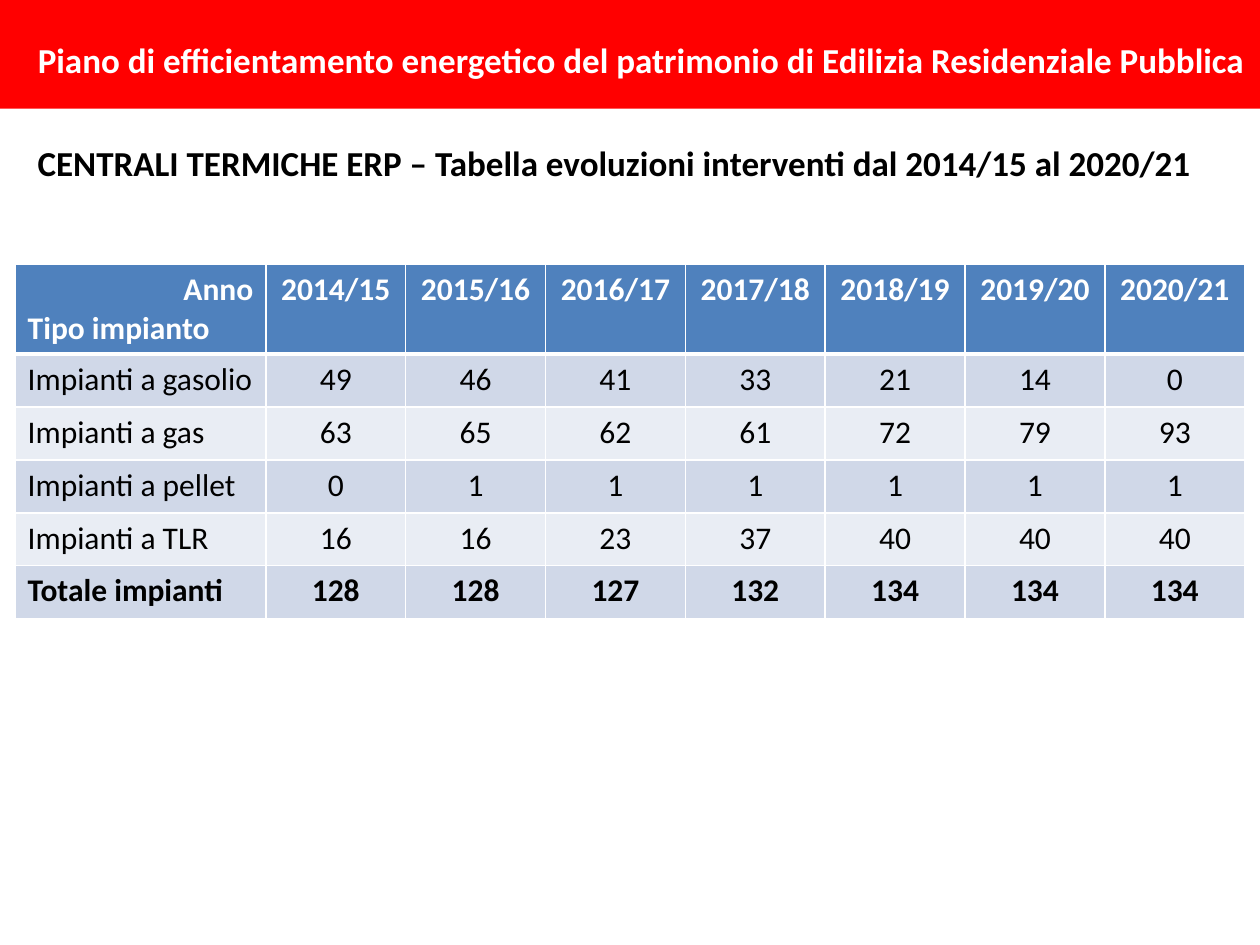
from lxml import etree
from pptx import Presentation
from pptx import util as u
from pptx.dml.color import RGBColor
from pptx.enum import shapes, text
from pptx.oxml import ns

RED = RGBColor(0xFF, 0x00, 0x00)
WHITE = RGBColor(0xFF, 0xFF, 0xFF)
BLACK = RGBColor(0x00, 0x00, 0x00)
BLUE = RGBColor(0x4F, 0x81, 0xBD)
BANDS = (RGBColor(0xE9, 0xED, 0xF4), RGBColor(0xD0, 0xD8, 0xE8))
LEFT, MID, RIGHT = text.PP_ALIGN.LEFT, text.PP_ALIGN.CENTER, text.PP_ALIGN.RIGHT

YEARS = [f"20{y}/{y + 1}" for y in range(14, 21)]
PLANTS = [
    ("Impianti a gasolio", 49, 46, 41, 33, 21, 14, 0),
    ("Impianti a gas", 63, 65, 62, 61, 72, 79, 93),
    ("Impianti a pellet", 0, 1, 1, 1, 1, 1, 1),
    ("Impianti a TLR", 16, 16, 23, 37, 40, 40, 40),
]
TOTAL = ("Totale impianti", *(sum(col) for col in list(zip(*PLANTS))[1:]))


class Deck:
    font = "Calibri"
    wide, high = 10, 7.5

    def __init__(self):
        self.prs = Presentation()
        self.prs.slide_width = u.Inches(self.wide)
        self.prs.slide_height = u.Inches(self.high)
        self.slide = self.prs.slides.add_slide(self.prs.slide_layouts[6])

    def box(self, x, y, w, h):
        sides = (self.wide, self.high) * 2
        return [u.Inches(s * n) for s, n in zip(sides, (x, y, w, h))]

    def put(self, para, words, size, color, bold=False, align=LEFT):
        para.alignment = align
        run = para.add_run()
        run.text = words
        font = run.font
        font.name, font.size, font.bold = self.font, u.Pt(size), bold
        font.color.rgb = color

    def banner(self, area, words):
        rect = self.slide.shapes.add_shape(shapes.MSO_SHAPE.RECTANGLE, *self.box(*area))
        rect.shadow.inherit = False
        rect.fill.solid()
        rect.fill.fore_color.rgb = RED
        rect.line.fill.background()
        frame = rect.text_frame
        frame.word_wrap = True
        frame.vertical_anchor = text.MSO_ANCHOR.MIDDLE
        frame.margin_left, frame.margin_top = u.Inches(0.3), u.Inches(0.13)
        self.put(frame.paragraphs[0], words, 20, WHITE, True)

    def label(self, area, words):
        frame = self.slide.shapes.add_textbox(*self.box(*area)).text_frame
        frame.word_wrap = True
        frame.auto_size = text.MSO_AUTO_SIZE.SHAPE_TO_FIT_TEXT
        self.put(frame.paragraphs[0], words, 20, BLACK, True)

    def edge(self, cell, head, first):
        props = cell._tc.get_or_add_tcPr()
        widths = {"L": 1, "R": 1, "T": 3 if first else 1, "B": 3 if head else 1}
        for spot, (side, width) in enumerate(widths.items()):
            line = etree.Element(ns.qn(f"a:ln{side}"), w=str(u.Pt(width)))
            fill = etree.SubElement(line, ns.qn("a:solidFill"))
            etree.SubElement(fill, ns.qn("a:srgbClr"), val=str(WHITE))
            props.insert(spot, line)

    def table(self, area, rows, cols, tall):
        frame = self.slide.shapes.add_table(len(rows), len(cols), *self.box(*area))
        grid = frame.table
        for col, share in zip(grid.columns, cols):
            col.width = u.Inches(share * self.wide)
        for row, share in zip(grid.rows, tall):
            row.height = u.Inches(share * self.high)
        for r, row in enumerate(rows):
            head, last = r == 0, r == len(rows) - 1
            for c, value in enumerate(row):
                cell = grid.cell(r, c)
                cell.fill.solid()
                cell.fill.fore_color.rgb = BLUE if head else BANDS[r % 2]
                self.edge(cell, head, r == 1)
                parts = value if isinstance(value, list) else [(str(value), MID if c else LEFT)]
                body = cell.text_frame
                for n, (words, align) in enumerate(parts):
                    para = body.add_paragraph() if n else body.paragraphs[0]
                    self.put(para, words, 18, WHITE if head else BLACK, head or last, align)


def main():
    deck = Deck()
    head = [[("Anno", RIGHT), ("Tipo impianto", LEFT)], *YEARS]
    deck.table((0.012, 0.28, 0.976, 0.373), [head, *PLANTS, TOTAL],
               [0.199] + [0.111] * len(YEARS), [0.093] + [0.056] * 5)
    deck.label((0.02, 0.143, 0.961, 0.059),
               "CENTRALI TERMICHE ERP – Tabella evoluzioni interventi dal 2014/15 al 2020/21")
    deck.banner((0, 0, 1, 0.115),
                "Piano di efficientamento energetico del patrimonio di Edilizia Residenziale Pubblica")
    deck.prs.save("out.pptx")


if __name__ == "__main__":
    main()
